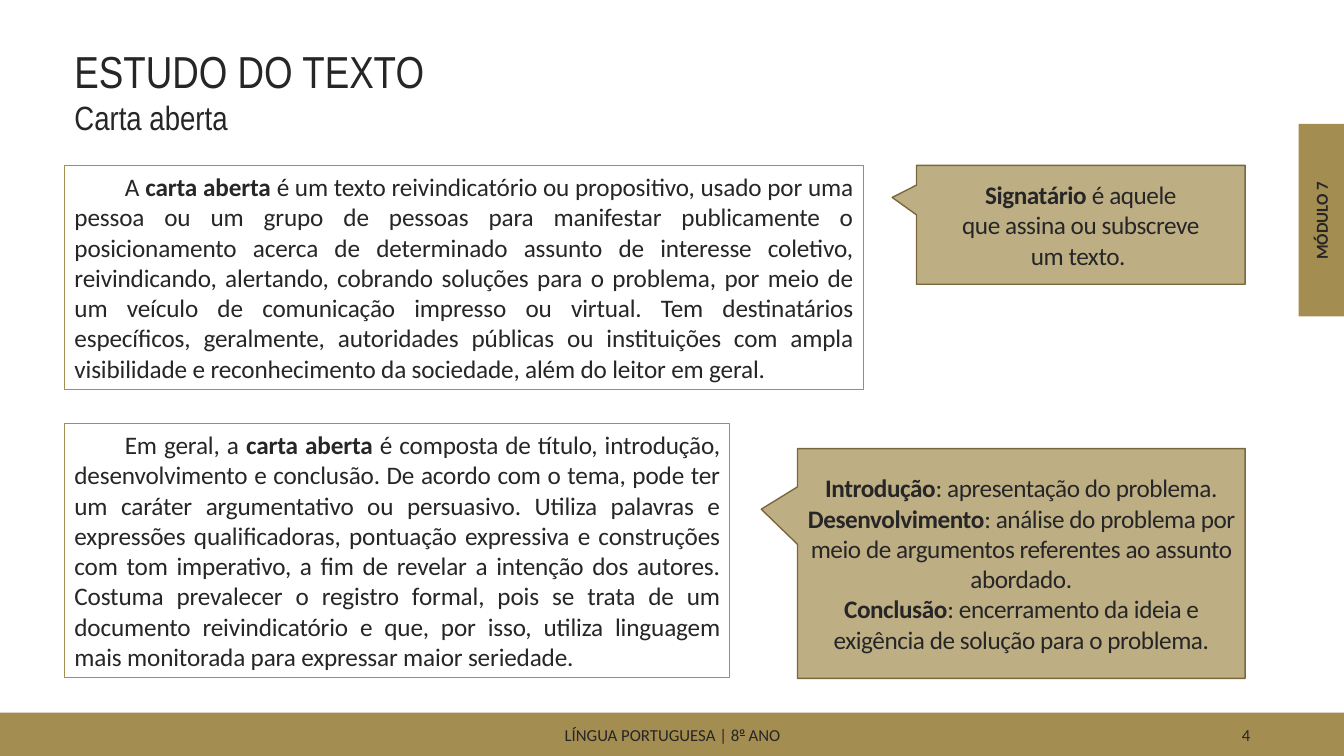
from lxml.etree import SubElement
from pptx import Presentation
from pptx.dml.color import RGBColor
from pptx.enum.shapes import MSO_SHAPE
from pptx.enum.text import MSO_ANCHOR, PP_ALIGN
from pptx.oxml.ns import qn
from pptx.util import Inches, Pt

# Content: each paragraph is a list of (text, style) runs
GOLD, EDGE, INK = "A38D51", "79683C", "262626"
TITLE = [("ESTUDO DO TEXTO", 32), ("Carta aberta", 24)]
MODULE = "MÓDULO 7"
FOOTER = [("LÍNGUA PORTUGUESA | 8", ""), ("o", "raised"), (" ANO", "")]
PAGE = "4"
BOXES = [
    ((0.64, 1.64, 7.92, 2.22), [
        ("A ", ""), ("carta aberta ", "bold"),
        ("é um texto reivindicatório ou propositivo, usado por uma pessoa ou "
         "um grupo de pessoas para manifestar publicamente o posicionamento "
         "acerca de determinado assunto de interesse coletivo, reivindicando, "
         "alertando, cobrando soluções para o problema, por meio de um veículo "
         "de comunicação impresso ou virtual. Tem destinatários específicos, "
         "geralmente, autoridades públicas ou instituições com ampla "
         "visibilidade e reconhecimento da sociedade, além do leitor em geral.",
         "")]),
    ((0.64, 4.2, 6.6, 2.52), [
        ("Em geral, a ", ""), ("carta aberta ", "bold"),
        ("é composta de título, introdução, desenvolvimento e conclusão. De "
         "acordo com o tema, pode ter um caráter argumentativo ou persuasivo. "
         "Utiliza palavras e expressões qualificadoras, pontuação expressiva e "
         "construções com tom imperativo, a fim de revelar a intenção dos "
         "autores. Costuma prevalecer o registro formal, pois se trata de um "
         "documento reivindicatório e que, por isso, utiliza linguagem mais "
         "monitorada para expressar maior seriedade.", "")]),
]
NOTES = [
    ((9.09, 1.64, 3.26, 1.18), (-0.574, -0.23), [
        [("Signatário", "bold"), (" é aquele", "")],
        [("que assina ou subscreve", "")],
        [("um texto. ", "")]]),
    ((7.91, 4.45, 4.44, 2.28), (-0.581, -0.236), [
        [("Introdução", "bold"), (": apresentação do problema.", "")],
        [("Desenvolvimento", "bold"),
         (": análise do problema por meio de argumentos referentes ao assunto "
          "abordado.", "")],
        [("Conclusão", "bold"),
         (": encerramento da ideia e exigência de solução para o problema.",
          "")]]),
]

deck = Presentation()
deck.slide_width, deck.slide_height = Inches(13.33), Inches(7.5)
slide = deck.slides.add_slide(deck.slide_layouts[6])


def paint(target, color):
    target.solid()
    target.fore_color.rgb = RGBColor.from_string(color)


def block(at, kind=MSO_SHAPE.RECTANGLE, fill=None, line=None, width=1):
    shape = slide.shapes.add_shape(kind, *map(Inches, at))
    shape.shadow.inherit = False
    if fill:
        paint(shape.fill, fill)
    else:
        shape.fill.background()
    if line:
        paint(shape.line.fill, line)
        shape.line.width = Pt(width)
    else:
        shape.line.fill.background()
    return shape


def label(at):
    return slide.shapes.add_textbox(*map(Inches, at))


def write(shape, paras, sizes=(18,), font="Calibri", align=PP_ALIGN.LEFT,
          anchor=MSO_ANCHOR.MIDDLE, after=0, indent=0, track=0):
    frame = shape.text_frame
    frame.word_wrap = True
    frame.vertical_anchor = anchor
    for i, runs in enumerate(paras):
        para = frame.paragraphs[0] if i == 0 else frame.add_paragraph()
        para.alignment = align
        if after:
            para.space_after = Pt(after)
        if indent:
            props = para._p.get_or_add_pPr()
            props.set("marL", "0")
            props.set("indent", str(Inches(indent)))
        for text, style in runs:
            run = para.add_run()
            run.text = text
            run.font.name = font
            run.font.size = Pt(sizes[i % len(sizes)])
            run.font.bold = style != ""
            paint(run.font.fill, INK)
            props = run._r.get_or_add_rPr()
            if track:
                props.set("spc", str(round(track * 100)))
            if style == "raised":
                run.font.underline = True
                props.set("baseline", "45000")


# Footer band
block((0, 7.07, 13.33, 0.45), fill=GOLD)
write(label((4.42, 7.1, 4.5, 0.38)), [FOOTER], sizes=(12,),
      align=PP_ALIGN.CENTER, after=6)
write(label((9.42, 7.1, 3.08, 0.38)), [[(PAGE, "")]], sizes=(12,),
      align=PP_ALIGN.RIGHT, after=6)

# Module tab
block((12.88, 1.23, 0.45, 1.91), fill=GOLD)
tab = label((12.15, 2.04, 1.91, 0.3))
tab.rotation = 270
write(tab, [[(MODULE, "bold")]], sizes=(12,), align=PP_ALIGN.CENTER,
      anchor=MSO_ANCHOR.TOP)

# Title
write(label((0.64, 0.38, 4.18, 1.04)), [[(text, "")] for text, _ in TITLE],
      sizes=[size for _, size in TITLE], font="Arial Narrow",
      anchor=MSO_ANCHOR.TOP)

# Framed text
for at, runs in BOXES:
    write(block(at, line=GOLD, width=0.75), [runs], align=PP_ALIGN.JUSTIFY,
          indent=0.5, track=-0.1)

# Callouts with see-through fill
for at, tip, paras in NOTES:
    note = block(at, MSO_SHAPE.RECTANGULAR_CALLOUT, GOLD, EDGE)
    note.adjustments[0], note.adjustments[1] = tip
    color = note._element.spPr.find(qn("a:solidFill")).find(qn("a:srgbClr"))
    SubElement(color, qn("a:alpha")).set("val", "70000")
    write(note, paras, align=PP_ALIGN.CENTER, track=-0.3)

deck.save("out.pptx")
